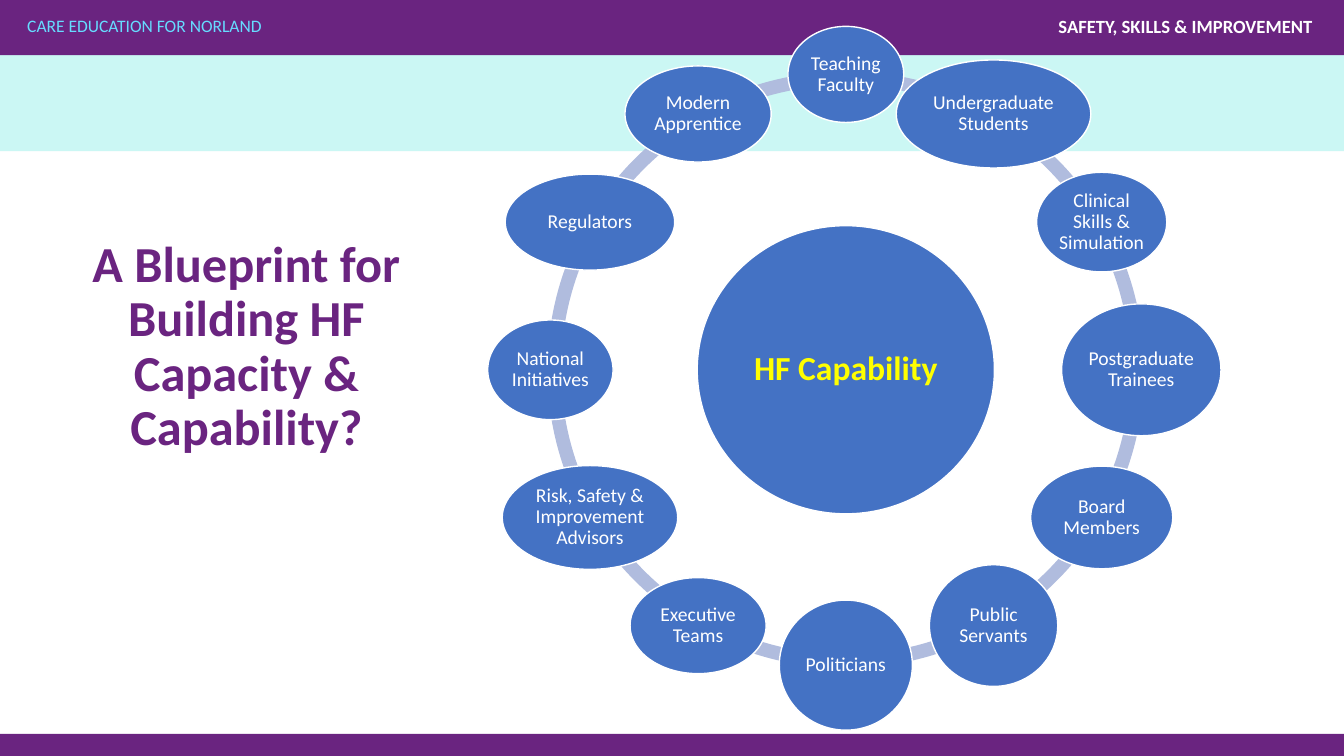
from dataclasses import dataclass
from math import cos, radians, sin

from pptx import Presentation
from pptx.dml.color import RGBColor
from pptx.enum.shapes import MSO_SHAPE as Preset
from pptx.enum.text import MSO_ANCHOR as Anchor, MSO_AUTO_SIZE as AutoSize, PP_ALIGN as Align
from pptx.util import Inches, Pt


@dataclass(frozen=True)
class Theme:
    font: str = "Calibri"
    purple: str = "6A2480"
    mint: str = "CBF7F4"
    sky: str = "66DCFF"
    white: str = "FFFFFF"
    yellow: str = "FFFF00"
    blue: str = "4472C4"
    lavender: str = "B0BCDE"
    title_size: float = 36
    hub_size: float = 24
    node_size: float = 14
    programme_size: float = 13.3
    body_size: float = 12.5


@dataclass(frozen=True)
class Box:
    left: float
    top: float
    width: float
    height: float

    def share(self, left, top, width, height):
        return Box(self.left + self.width * left / 100, self.top + self.height * top / 100,
                   self.width * width / 100, self.height * height / 100)

    def centred(self, x, y, width, height):
        return self.share(x - width / 2, y - height / 2, width, height)

    def lengths(self):
        return [Inches(length) for length in (self.left, self.top, self.width, self.height)]


THEME = Theme()
PAGE = Box(0, 0, 13.33, 7.5)
RING_THICKNESS = 0.023
ORBIT = 49.5

AUDIENCES = [
    ("Teaching Faculty", 19.4, 16.1),
    ("Undergraduate Students", 32.6, 18.1),
    ("Clinical Skills & Simulation", 21.8, 16.7),
    ("Postgraduate Trainees", 26.7, 22.1),
    ("Board Members", 23.8, 17.2),
    ("Public Servants", 21.5, 20.4),
    ("Politicians", 22.3, 21.8),
    ("Executive Teams", 22.8, 16.1),
    ("Risk, Safety & Improvement Advisors", 29.4, 17.4),
    ("National Initiatives", 21, 16.7),
    ("Regulators", 28.4, 16.1),
    ("Modern Apprentice", 24.5, 16.1),
]


def apply(target, formats):
    for name, value in formats.items():
        setattr(target, name, value)


def write(frame, wording, size, color, bold=False, align=Align.CENTER, inset=0.0,
          anchor=Anchor.MIDDLE, spacing=0.9):
    margin = Inches(inset)
    apply(frame, {"word_wrap": True, "auto_size": AutoSize.NONE, "vertical_anchor": anchor,
                  "margin_left": margin, "margin_right": margin,
                  "margin_top": margin, "margin_bottom": margin})
    frame.text = wording
    paragraph = frame.paragraphs[0]
    apply(paragraph, {"alignment": align, "line_spacing": spacing})
    font = paragraph.runs[0].font
    apply(font, {"name": THEME.font, "size": Pt(size), "bold": bold})
    font.color.rgb = RGBColor.from_string(color)


def add_filled(slide, preset, box, color, outline=None):
    figure = slide.shapes.add_shape(preset, *box.lengths())
    figure.shadow.inherit = False
    figure.fill.solid()
    figure.fill.fore_color.rgb = RGBColor.from_string(color)
    if outline:
        figure.line.color.rgb = RGBColor.from_string(outline)
        figure.line.width = Pt(1)
    else:
        figure.line.fill.background()
    return figure


def add_header(slide, box):
    add_filled(slide, Preset.RECTANGLE, box, THEME.mint)
    add_filled(slide, Preset.RECTANGLE, box.share(0, 0, 100, 36.5), THEME.purple)
    labels = [
        ("CARE EDUCATION FOR NORLAND", box.share(2.03, 10, 41, 14),
         THEME.body_size, THEME.sky, False, Align.LEFT),
        ("SAFETY, SKILLS & IMPROVEMENT", box.share(52.89, 10, 44.79, 14.5),
         THEME.programme_size, THEME.white, True, Align.RIGHT),
    ]
    for wording, place, size, color, bold, align in labels:
        label = slide.shapes.add_textbox(*place.lengths())
        write(label.text_frame, wording, size, color, bold, align,
              anchor=Anchor.TOP, spacing=1.0)


def add_footer(slide, box):
    add_filled(slide, Preset.RECTANGLE, box, THEME.purple)


def add_title(slide, box):
    title = slide.shapes.title
    apply(title, dict(zip(("left", "top", "width", "height"), box.lengths())))
    write(title.text_frame, "A Blueprint for Building HF Capacity & Capability?",
          THEME.title_size, THEME.purple, bold=True, inset=0.1)


def add_bubble(slide, box, wording, size, color, bold=False, inset=0.02):
    bubble = add_filled(slide, Preset.OVAL, box, THEME.blue, THEME.white)
    write(bubble.text_frame, wording, size, color, bold, inset=inset)


def add_capability_ring(slide, box):
    count = len(AUDIENCES)
    step = 360 / count
    for index in range(count):
        arc = add_filled(slide, Preset.BLOCK_ARC, box, THEME.lavender)
        start, end = (step * (turn % count) * 0.6 for turn in (index, index + 1))
        for slot, value in enumerate((start, end, RING_THICKNESS)):
            arc.adjustments[slot] = value
    add_bubble(slide, box.centred(50, 50, 49.8, 48.3), "HF Capability",
               THEME.hub_size, THEME.yellow, bold=True, inset=0.03)
    for index, (audience, width, height) in enumerate(AUDIENCES):
        angle = radians(step * index)
        spot = box.centred(50 + ORBIT * sin(angle), 50 - ORBIT * cos(angle), width, height)
        add_bubble(slide, spot, audience, THEME.node_size, THEME.white)


def main():
    deck = Presentation()
    apply(deck, {"slide_width": Inches(PAGE.width), "slide_height": Inches(PAGE.height)})
    slide = deck.slides.add_slide(deck.slide_layouts[5])
    add_header(slide, PAGE.share(0, 0, 100, 20))
    add_footer(slide, PAGE.share(0, 97.07, 100, 2.93))
    add_title(slide, PAGE.share(3.6, 42, 29.48, 8))
    add_capability_ring(slide, PAGE.share(40.73, 9.45, 44.41, 78.93))
    deck.save("out.pptx")


if __name__ == "__main__":
    main()
